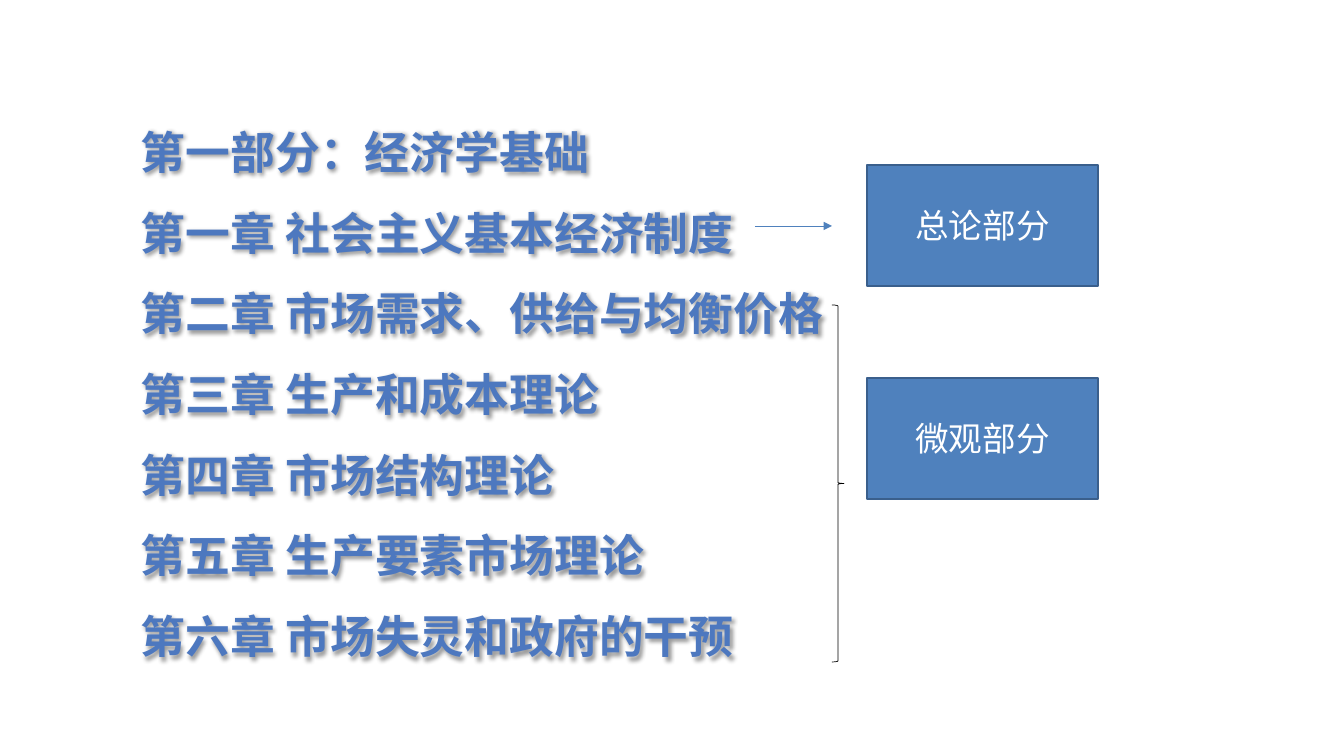
from lxml import etree
from pptx import Presentation
from pptx.dml.color import RGBColor
from pptx.enum.shapes import MSO_CONNECTOR, MSO_SHAPE
from pptx.enum.text import MSO_ANCHOR, MSO_AUTO_SIZE, PP_ALIGN
from pptx.oxml import parse_xml
from pptx.oxml.ns import qn
from pptx.util import Emu, Pt

STRAIGHT = MSO_CONNECTOR.STRAIGHT
RECTANGLE, BRACE = MSO_SHAPE.RECTANGLE, MSO_SHAPE.RIGHT_BRACE
MIDDLE, CENTER = MSO_ANCHOR.MIDDLE, PP_ALIGN.CENTER
GROW = MSO_AUTO_SIZE.SHAPE_TO_FIT_TEXT

EMU_PER_PX = 914400 / 100.8
FONT = "Arial"
COLORS = {"heading": "4D78BF", "box": "4F81BD", "edge": "3A5F8C",
          "white": "FFFFFF", "black": "000000"}
TEXT_SHADOW = (
    '<a:effectLst xmlns:a="http://schemas.openxmlformats.org/drawingml/2006/main">'
    '<a:outerShdw blurRad="38100" dist="25400" dir="2700000" algn="tl" rotWithShape="0">'
    '<a:srgbClr val="000000"><a:alpha val="40000"/></a:srgbClr>'
    '</a:outerShdw></a:effectLst>')

CHAPTERS = [
    "第一部分：经济学基础",
    "第一章 社会主义基本经济制度",
    "第二章 市场需求、供给与均衡价格",
    "第三章 生产和成本理论",
    "第四章 市场结构理论",
    "第五章 生产要素市场理论",
    "第六章 市场失灵和政府的干预",
]
PARTS = [("总论部分", 165), ("微观部分", 378)]


def px(*lengths):
    return [Emu(round(length * EMU_PER_PX)) for length in lengths]


def color(name):
    return RGBColor.from_string(COLORS[name])


class SlideBuilder:
    def __init__(self, page):
        self.page = page

    def style_font(self, para, size, color_name, bold=False):
        para.font.name = FONT
        para.font.size = Pt(size)
        para.font.bold = bold
        para.font.color.rgb = color(color_name)

    def style_line(self, item, color_name, width):
        item.line.color.rgb = color(color_name)
        item.line.width = Pt(width)

    def chapter_list(self, lines, left, top, width, height):
        box = self.page.shapes.add_textbox(*px(left, top, width, height))
        frame = box.text_frame
        frame.word_wrap = True
        frame.auto_size = GROW
        frame.text = "\n".join(lines)
        for para in frame.paragraphs:
            para.line_spacing = 1.5
            self.style_font(para, 32, "heading", bold=True)
        box.fill.background()
        box.element.spPr.append(parse_xml(TEXT_SHADOW))

    def brace(self, left, top, width, height):
        shape = self.page.shapes.add_shape(BRACE, *px(left, top, width, height))
        shape.shadow.inherit = False
        shape.fill.background()
        self.style_line(shape, "black", 0.5)

    def label_box(self, text, left, top, width, height):
        box = self.page.shapes.add_shape(RECTANGLE, *px(left, top, width, height))
        box.shadow.inherit = False
        box.fill.solid()
        box.fill.fore_color.rgb = color("box")
        self.style_line(box, "edge", 1)
        frame = box.text_frame
        frame.text = text
        frame.vertical_anchor = MIDDLE
        para = frame.paragraphs[0]
        para.alignment = CENTER
        self.style_font(para, 24, "white")

    def arrow(self, start_x, start_y, end_x, end_y):
        connector = self.page.shapes.add_connector(
            STRAIGHT, *px(start_x, start_y, end_x, end_y))
        self.style_line(connector, "box", 0.5)
        etree.SubElement(connector.line._get_or_add_ln(), qn("a:tailEnd"), type="triangle")
        etree.SubElement(connector.element.spPr, qn("a:effectLst"))


def main():
    deck = Presentation()
    deck.slide_width, deck.slide_height = px(1344, 756)
    page = deck.slides.add_slide(deck.slide_layouts[6])
    builder = SlideBuilder(page)
    builder.chapter_list(CHAPTERS, 131, 93, 1003, 570)
    builder.brace(832, 305, 12, 357)
    builder.arrow(755, 226, 832, 226)
    for text, top in PARTS:
        builder.label_box(text, 867, top, 231, 121)
    deck.save("out.pptx")


if __name__ == "__main__":
    main()
